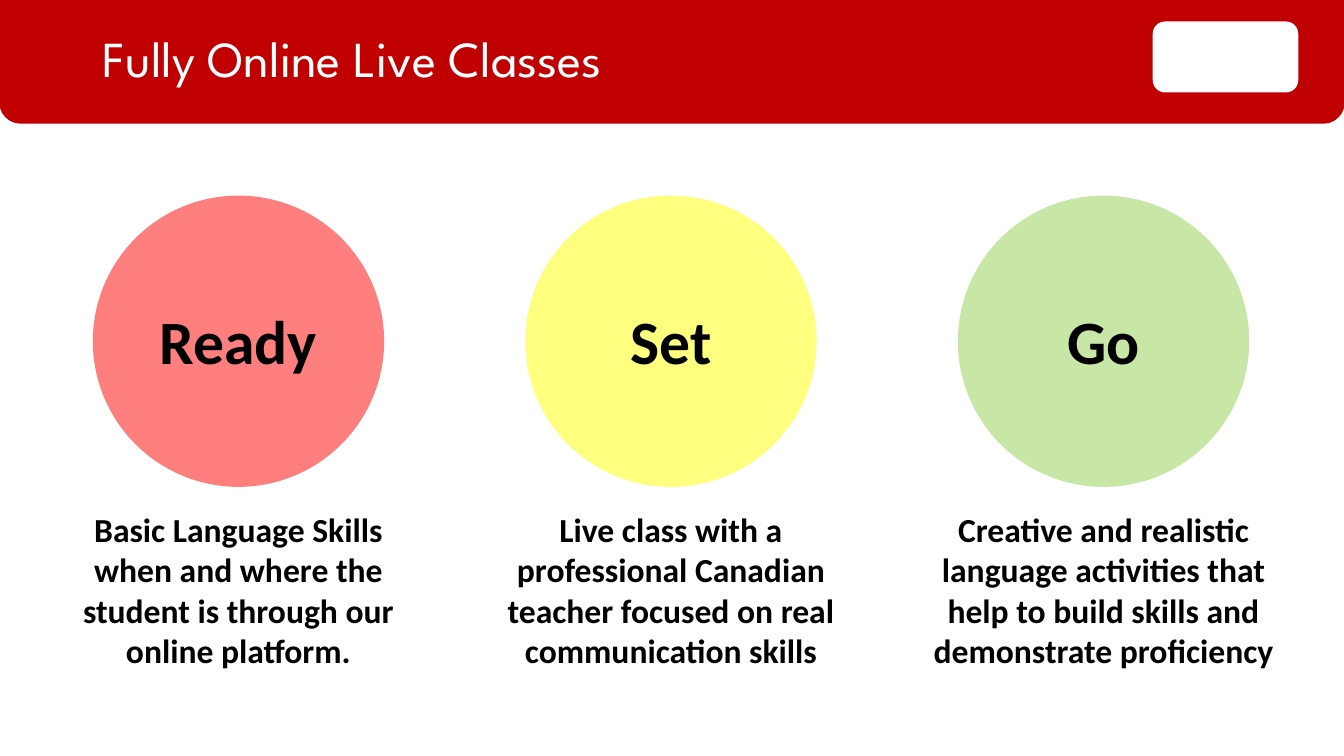
from lxml.etree import SubElement
from pptx import Presentation
from pptx.dml.color import RGBColor
from pptx.enum.shapes import MSO_SHAPE
from pptx.enum.text import MSO_ANCHOR, PP_ALIGN
from pptx.oxml.ns import qn
from pptx.util import Inches, Pt

COLORS = {
    "band": "C00000",
    "white": "FFFFFF",
    "black": "000000",
    "red": "FF0000",
    "yellow": "FFFF00",
    "green": "92D050",
}
WIDTH, HEIGHT = 13.33, 7.5
LEFT, TOP, SIZE, STEP = 0.92, 1.94, 2.89, 4.29

# Label, colour, caption, caption width
STAGES = [
    ("Ready", "red", "Basic Language Skills when and where the student "
     "is through our online platform.", 3.37),
    ("Set", "yellow", "Live class with a professional Canadian teacher "
     "focused on real communication skills", 3.82),
    ("Go", "green", "Creative and realistic language activities that help "
     "to build skills and demonstrate proficiency", 3.62),
]


def color(name):
    return RGBColor.from_string(COLORS[name])


def add_form(slide, kind, box, fill, alpha=None):
    form = slide.shapes.add_shape(kind, *map(Inches, box))
    form.shadow.inherit = False
    form.fill.solid()
    form.fill.fore_color.rgb = color(fill)
    if alpha is None:
        form.line.color.rgb = color(fill)
        form.line.width = Pt(1)
    else:
        form.line.fill.background()
        tint = form.fill._xPr.find(qn("a:solidFill"))[0]
        SubElement(tint, qn("a:alpha"), val=str(alpha * 1000))
    return form


def add_text(slide, box, text, size, face="Calibri", ink="black",
             bold=True, align=PP_ALIGN.CENTER, anchor=MSO_ANCHOR.TOP):
    frame = slide.shapes.add_textbox(*map(Inches, box)).text_frame
    frame.word_wrap = True
    frame.vertical_anchor = anchor
    para = frame.paragraphs[0]
    para.text = text
    para.alignment = align
    para.font.name = face
    para.font.size = Pt(size)
    para.font.bold = bold
    para.font.color.rgb = color(ink)
    return para


def add_header(slide, left, top, width, height):
    # Band with rounded lower corners
    band = add_form(slide, MSO_SHAPE.ROUND_2_SAME_RECTANGLE,
                    (left, top, width, height), "band")
    band.rotation = 180
    # White badge at the right
    add_form(slide, MSO_SHAPE.ROUNDED_RECTANGLE,
             (left + width - 1.89, top + 0.22, 1.43, 0.69), "white")
    # Title
    title = add_text(slide, (left + LEFT, top, 9.72, height),
                     "Fully Online Live Classes", 36, "League Spartan",
                     "white", False, PP_ALIGN.LEFT, MSO_ANCHOR.MIDDLE)
    title.line_spacing = 0.9


def add_stage(slide, left, top, size, stage):
    label, fill, caption, width = stage
    # Circle and its label
    add_form(slide, MSO_SHAPE.OVAL, (left, top, size, size), fill, 50)
    add_text(slide, (left, top + 1.02, size, 0.84), label, 44)
    # Caption centred below
    start = left + (size - width) / 2
    add_text(slide, (start, top + size + 0.17, width, 1.72), caption, 24)


def main():
    deck = Presentation()
    deck.slide_width, deck.slide_height = Inches(WIDTH), Inches(HEIGHT)
    slide = deck.slides.add_slide(deck.slide_layouts[6])
    add_header(slide, 0, 0, WIDTH, 1.22)
    for index, stage in enumerate(STAGES):
        add_stage(slide, LEFT + index * STEP, TOP, SIZE, stage)
    deck.save("out.pptx")


if __name__ == "__main__":
    main()
